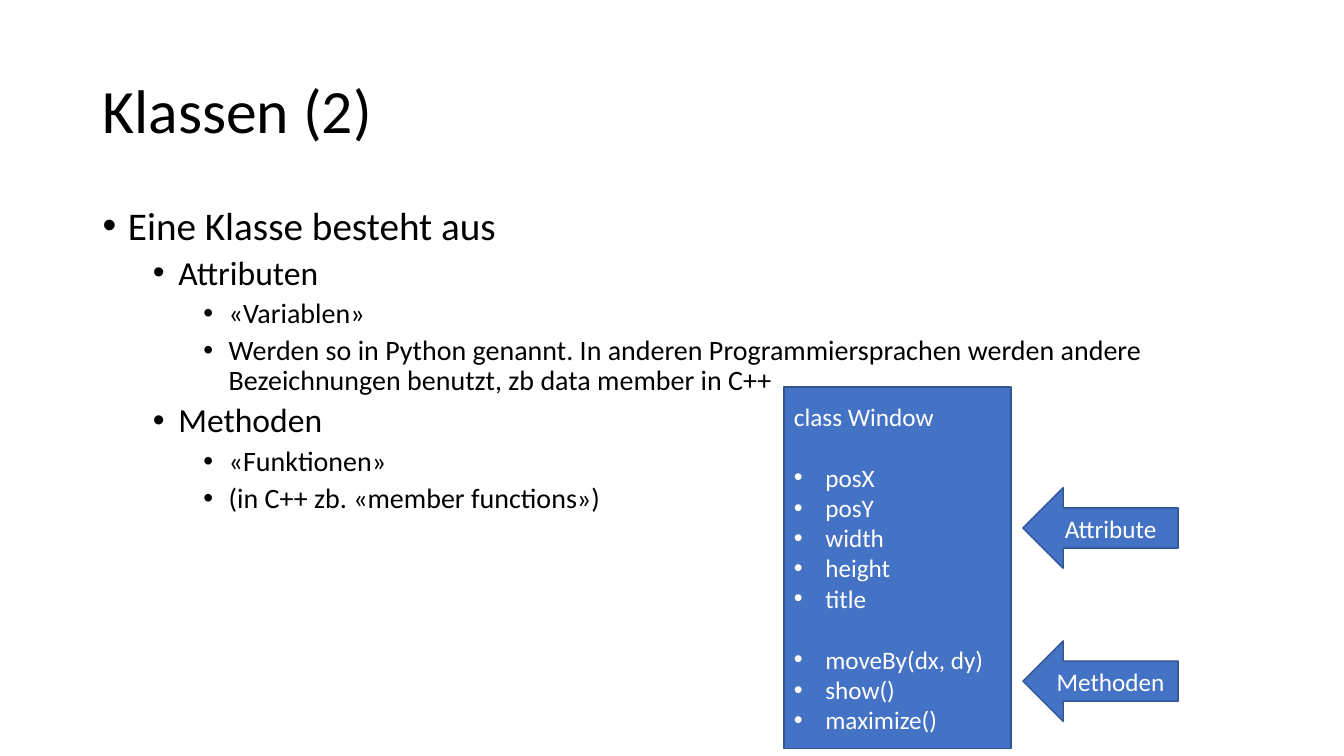
from lxml.etree import SubElement
from pptx import Presentation
from pptx.dml.color import RGBColor
from pptx.enum.shapes import MSO_SHAPE as Preset
from pptx.enum.text import MSO_ANCHOR as Anchor, MSO_AUTO_SIZE as AutoSize, PP_ALIGN as Align
from pptx.oxml.ns import qn
from pptx.util import Cm, Pt


def colour(value):
    return RGBColor.from_string(value)


def add_text(frame, text, size=18, ink="000000", font="Calibri", align=Align.LEFT,
             level=0, indent=None, hanging=0.64, spacing=1.0, before=0):
    first = frame.paragraphs[0]
    paragraph = frame.add_paragraph() if first.runs else first
    paragraph.level = level
    paragraph.alignment = align
    paragraph.line_spacing = spacing
    paragraph.space_before = Pt(before)
    run = paragraph.add_run()
    run.text = text
    run.font.size = Pt(size)
    run.font.name = font
    run.font.color.rgb = colour(ink)
    if indent is not None:
        properties = paragraph._p.get_or_add_pPr()
        properties.set("marL", str(Cm(indent)))
        properties.set("indent", str(-Cm(hanging)))
        SubElement(properties, qn("a:buFont")).set("typeface", "Arial")
        SubElement(properties, qn("a:buChar")).set("char", "•")


class ClassSlide:
    fill = "4472C4"
    outline = "325491"
    light = "FFFFFF"

    def __init__(self, deck):
        self.slide = deck.slides.add_slide(deck.slide_layouts[1])

    def placeholder(self, index, left, top, width, height, anchor):
        holder = self.slide.placeholders[index]
        holder.left, holder.top = Cm(left), Cm(top)
        holder.width, holder.height = Cm(width), Cm(height)
        frame = holder.text_frame
        frame.auto_size = AutoSize.NONE
        frame.vertical_anchor = anchor
        return frame

    def title(self, text):
        frame = self.placeholder(0, 2.33, 1.01, 29.21, 3.68, Anchor.MIDDLE)
        add_text(frame, text, size=44, spacing=0.9)

    def outline_list(self, entries):
        frame = self.placeholder(1, 2.33, 5.08, 29.21, 12.09, Anchor.TOP)
        for level, text in entries:
            add_text(frame, text, size=(28, 24, 20)[level], level=level,
                     indent=0.64 + 1.27 * level, spacing=0.9,
                     before=5 if level else 10)

    def shape(self, preset, left, top, width, height):
        block = self.slide.shapes.add_shape(preset, Cm(left), Cm(top), Cm(width), Cm(height))
        block.shadow.inherit = False
        block.fill.solid()
        block.fill.fore_color.rgb = colour(self.fill)
        block.line.color.rgb = colour(self.outline)
        block.line.width = Pt(1)
        block.text_frame.word_wrap = True
        block.text_frame.vertical_anchor = Anchor.MIDDLE
        return block.text_frame

    def class_box(self, heading, groups):
        frame = self.shape(Preset.RECTANGLE, 19.76, 9.75, 5.72, 9.12)
        add_text(frame, heading, ink=self.light)
        for members in groups:
            for position, member in enumerate(members):
                add_text(frame, member, ink=self.light, indent=0.79, hanging=0.79,
                         before=0 if position else 22)

    def arrow(self, label, top):
        frame = self.shape(Preset.LEFT_ARROW, 25.78, top, 3.91, 2.03)
        add_text(frame, label, ink=self.light, align=Align.CENTER)


def main():
    deck = Presentation()
    deck.slide_width, deck.slide_height = Cm(33.87), Cm(19.05)
    page = ClassSlide(deck)
    page.title("Klassen (2)")
    page.outline_list([
        (0, "Eine Klasse besteht aus"),
        (1, "Attributen"),
        (2, "«Variablen»"),
        (2, "Werden so in Python genannt. In anderen Programmiersprachen werden "
            "andere Bezeichnungen benutzt, zb data member in C++"),
        (1, "Methoden"),
        (2, "«Funktionen»"),
        (2, "(in C++ zb. «member functions»)"),
    ])
    page.class_box("class Window", [
        ("posX", "posY", "width", "height", "title"),
        ("moveBy(dx, dy)", "show()", "maximize()"),
    ])
    page.arrow("Attribute", 12.29)
    page.arrow("Methoden", 16.15)
    deck.save("out.pptx")


if __name__ == "__main__":
    main()
